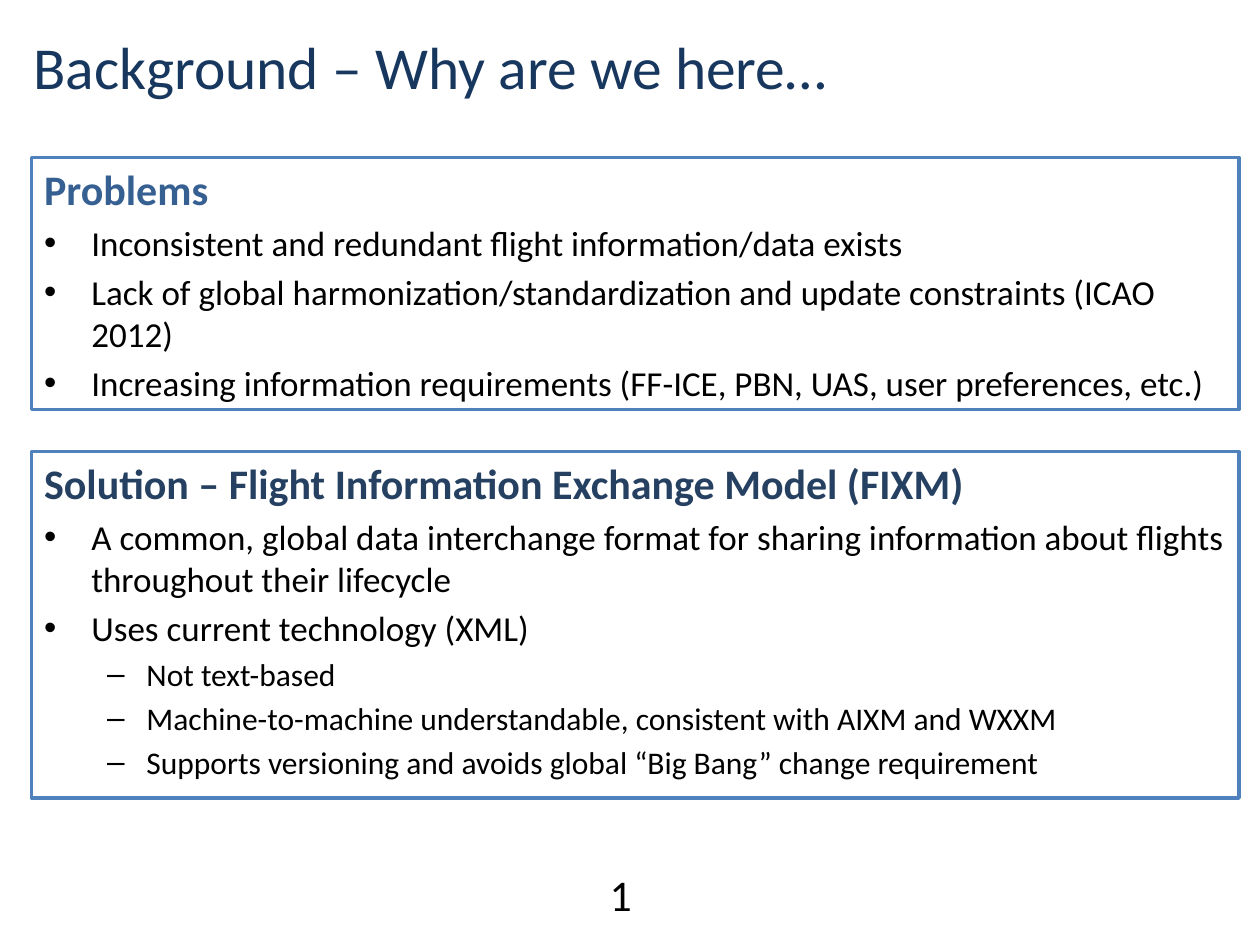
from dataclasses import dataclass

from lxml import etree
from pptx import Presentation
from pptx import util as u
from pptx.dml.color import RGBColor
from pptx.enum import text
from pptx.oxml import ns

EMU_PER_PX = 9525  # 96 px to the inch


@dataclass(frozen=True)
class Theme:
    font: str = "Calibri"
    title: str = "17375E"
    problem: str = "376092"
    solution: str = "254061"
    ink: str = "000000"
    paper: str = "FFFFFF"
    border: str = "4F81BD"
    title_size: int = 34
    number_size: int = 25
    heading_size: int = 24
    item_sizes: tuple = (20, 18)


@dataclass(frozen=True)
class Bullet:
    char: str
    margin: int
    hang: int


@dataclass(frozen=True)
class Item:
    text: str
    level: int = 0


@dataclass(frozen=True)
class Panel:
    top: int
    height: int
    heading: str
    color: str
    items: tuple


THEME = Theme()
BULLETS = (Bullet("•", 36, 36), Bullet("–", 78, 30))
PANEL_LEFT, PANEL_WIDTH = 24, 920

PANELS = (
    Panel(120, 192, "Problems", THEME.problem, (
        Item("Inconsistent and redundant flight information/data exists"),
        Item("Lack of global harmonization/standardization and update constraints (ICAO 2012)"),
        Item("Increasing information requirements (FF-ICE, PBN, UAS, user preferences, etc.)"),
    )),
    Panel(344, 264, "Solution – Flight Information Exchange Model (FIXM)", THEME.solution, (
        Item("A common, global data interchange format for sharing information about flights "
             "throughout their lifecycle"),
        Item("Uses current technology (XML)"),
        Item("Not text-based", 1),
        Item("Machine-to-machine understandable, consistent with AIXM and WXXM", 1),
        Item("Supports versioning and avoids global “Big Bang” change requirement", 1),
    )),
)


def px(length: int) -> u.Emu:
    return u.Emu(length * EMU_PER_PX)


def place(box, left: int, top: int, width: int, height: int) -> None:
    box.left, box.top, box.width, box.height = map(px, (left, top, width, height))


def prepare_frame(box, anchor=text.MSO_ANCHOR.TOP):
    frame = box.text_frame
    frame.word_wrap = True
    frame.auto_size = text.MSO_AUTO_SIZE.NONE
    frame.vertical_anchor = anchor
    return frame


def write(para, words: str, *, size: int, color: str = THEME.ink, bold: bool = False,
          align=text.PP_ALIGN.LEFT, before: float = 0, level: int = 0,
          bullet: Bullet | None = None) -> None:
    para.alignment = align
    para.space_before = u.Pt(before)
    para.level = level
    props = para._p.get_or_add_pPr()
    props.set("marL", str(px(bullet.margin if bullet else 0)))
    props.set("indent", str(px(-bullet.hang if bullet else 0)))
    mark = etree.SubElement(props, ns.qn("a:buChar" if bullet else "a:buNone"))
    if bullet:
        mark.set("char", bullet.char)
    span = para.add_run()
    span.text = words
    span.font.name = THEME.font
    span.font.size = u.Pt(size)
    span.font.bold = bold
    span.font.color.rgb = RGBColor.from_string(color)


def draw_panel(box, panel: Panel) -> None:
    place(box, PANEL_LEFT, panel.top, PANEL_WIDTH, panel.height)
    box.fill.solid()
    box.fill.fore_color.rgb = RGBColor.from_string(THEME.paper)
    box.line.color.rgb = RGBColor.from_string(THEME.border)
    box.line.width = u.Pt(2)
    frame = prepare_frame(box)
    write(frame.paragraphs[0], panel.heading, size=THEME.heading_size,
          color=panel.color, bold=True)
    for item in panel.items:
        size = THEME.item_sizes[item.level]
        write(frame.add_paragraph(), item.text, size=size, before=size * 0.2,
              level=item.level, bullet=BULLETS[item.level])


def main() -> None:
    deck = Presentation()
    deck.slide_width, deck.slide_height = px(960), px(720)
    page = deck.slides.add_slide(deck.slide_layouts.get_by_name("Two Content"))

    # Title
    title = page.shapes.title
    place(title, 16, 18, 648, 66)
    write(prepare_frame(title).paragraphs[0], "Background – Why are we here…",
          size=THEME.title_size, color=THEME.title)

    # Page number
    number = page.shapes.add_textbox(px(455), px(656), px(32), px(50))
    write(prepare_frame(number, text.MSO_ANCHOR.MIDDLE).paragraphs[0], "1",
          size=THEME.number_size, align=text.PP_ALIGN.JUSTIFY)

    # Problem and solution panels
    for index, panel in enumerate(PANELS, start=1):
        draw_panel(page.placeholders[index], panel)

    deck.save("out.pptx")


if __name__ == "__main__":
    main()
